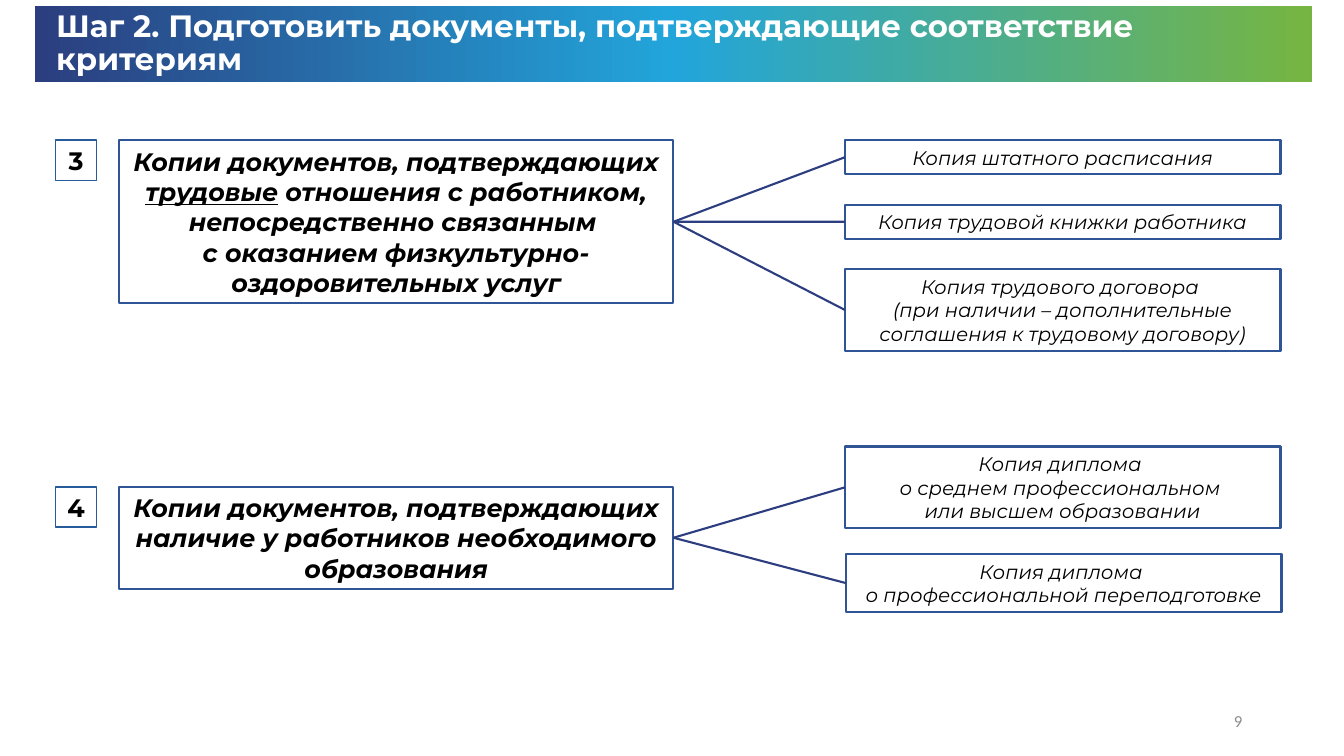
from copy import deepcopy

from lxml import etree
from pptx import Presentation
from pptx import util as u
from pptx.dml.color import RGBColor
from pptx.enum import shapes, text
from pptx.oxml.ns import qn

COLORS = {
    "navy": "2B3E7F", "sky": "22A5DB", "green": "76B542",
    "box": "2F5597", "number": "285B99", "connector": "2C3E80",
    "black": "000000", "white": "FFFFFF", "gray": "8C8C8C",
}
RIGHT_SITE, LEFT_SITE = 3, 1

# Number, top, height, label parts (odd parts are underlined), copies (left, top, height, label)
STEPS = [
    ("3", 1.39, 1.62,
     ["Копии документов, подтверждающих ", "трудовые",
      " отношения с работником, непосредственно связанным \n"
      "с оказанием физкультурно-оздоровительных услуг"],
     [(8.38, 1.39, 0.34, "Копия штатного расписания"),
      (8.38, 2.03, 0.34, "Копия трудовой книжки работника"),
      (8.38, 2.67, 0.81, "Копия трудового договора \n"
       "(при наличии – дополнительные соглашения к трудовому договору)")]),
    ("4", 4.83, 1.01,
     ["Копии документов, подтверждающих наличие у работников необходимого образования"],
     [(8.38, 4.43, 0.81, "Копия диплома \nо среднем профессиональном \n"
       "или высшем образовании"),
      (8.39, 5.5, 0.57, "Копия диплома \nо профессиональной переподготовке")]),
]


def rgb(name):
    return RGBColor.from_string(COLORS[name])


class SlideBuilder:
    def __init__(self, slide, font="Montserrat"):
        self.slide = slide
        self.font = font

    def set_label(self, shape, parts, size, color="black", bold=False, italic=False,
                  align=text.PP_ALIGN.CENTER, font=None):
        """Fill a shape with one paragraph; every second part is underlined."""
        frame = shape.text_frame
        frame.word_wrap = True
        frame.vertical_anchor = text.MSO_ANCHOR.MIDDLE
        paragraph = frame.paragraphs[0]
        paragraph.alignment = align
        for index, part in enumerate(parts):
            for line_index, line in enumerate(part.split("\n")):
                if line_index:
                    paragraph.add_line_break()
                run = paragraph.add_run()
                run.text = line
                run.font.name = font or self.font
                run.font.size = u.Pt(size)
                run.font.bold = bold
                run.font.italic = italic
                run.font.underline = index % 2 == 1
                run.font.color.rgb = rgb(color)
        return paragraph

    def rectangle(self, *place):
        shape = self.slide.shapes.add_shape(
            shapes.MSO_SHAPE.RECTANGLE, *map(u.Inches, place))
        shape.shadow.inherit = False
        return shape

    def gradient_band(self, place, colors):
        band = self.rectangle(*place)
        band.line.fill.background()
        band.fill.gradient()
        band.fill.gradient_angle = 0
        stop_list = band._element.spPr.find(qn("a:gradFill")).find(qn("a:gsLst"))
        while len(stop_list) < len(colors):
            stop_list.append(deepcopy(stop_list[0]))
        for index, (stop, color) in enumerate(zip(band.fill.gradient_stops, colors)):
            stop.position = index / (len(colors) - 1)
            stop.color.rgb = rgb(color)

    def text_box(self, place, label, size, color, **style):
        box = self.slide.shapes.add_textbox(*map(u.Inches, place))
        return self.set_label(box, [label], size, color, **style)

    def outlined_box(self, place, parts, size, line="box", width=1.5, grow=True, **style):
        box = self.rectangle(*place)
        box.fill.background()
        box.line.color.rgb = rgb(line)
        box.line.width = u.Pt(width)
        self.set_label(box, parts, size, **style)
        if grow:
            box.text_frame.auto_size = text.MSO_AUTO_SIZE.SHAPE_TO_FIT_TEXT
        return box

    def link(self, source, target):
        """Join the right side of one box to the left side of another."""
        line = self.slide.shapes.add_connector(shapes.MSO_CONNECTOR.STRAIGHT, 0, 0, 0, 0)
        line.begin_connect(source, RIGHT_SITE)
        line.end_connect(target, LEFT_SITE)
        line.line.color.rgb = rgb("connector")
        line.line.width = u.Pt(1.5)
        etree.SubElement(line._element.spPr, qn("a:effectLst"))

    def step(self, number, top, height, parts, copies):
        self.outlined_box((0.55, top, 0.41, 0.4), [number], 18, line="number",
                          width=1, grow=False, bold=True)
        source = self.outlined_box((1.18, top, 5.5, height), parts, 18,
                                   bold=True, italic=True)
        for left, copy_top, copy_height, label in copies:
            target = self.outlined_box((left, copy_top, 4.32, copy_height), [label], 14,
                                       italic=True)
            self.link(source, target)


def main():
    presentation = Presentation()
    presentation.slide_width = u.Inches(13.33)
    presentation.slide_height = u.Inches(7.5)
    builder = SlideBuilder(presentation.slides.add_slide(presentation.slide_layouts[6]))

    builder.gradient_band((0.35, 0.06, 12.66, 0.75), ["navy", "sky", "green"])
    title = builder.text_box(
        (0.46, 0.07, 12.66, 0.73),
        "Шаг 2. Подготовить документы, подтверждающие соответствие критериям",
        22, "white", bold=True, align=text.PP_ALIGN.LEFT)
    title.line_spacing = 0.9
    for step in STEPS:
        builder.step(*step)
    builder.text_box((9.42, 6.95, 3, 0.4), "9", 12, "gray",
                     align=text.PP_ALIGN.RIGHT, font="Calibri")
    presentation.save("out.pptx")


if __name__ == "__main__":
    main()
